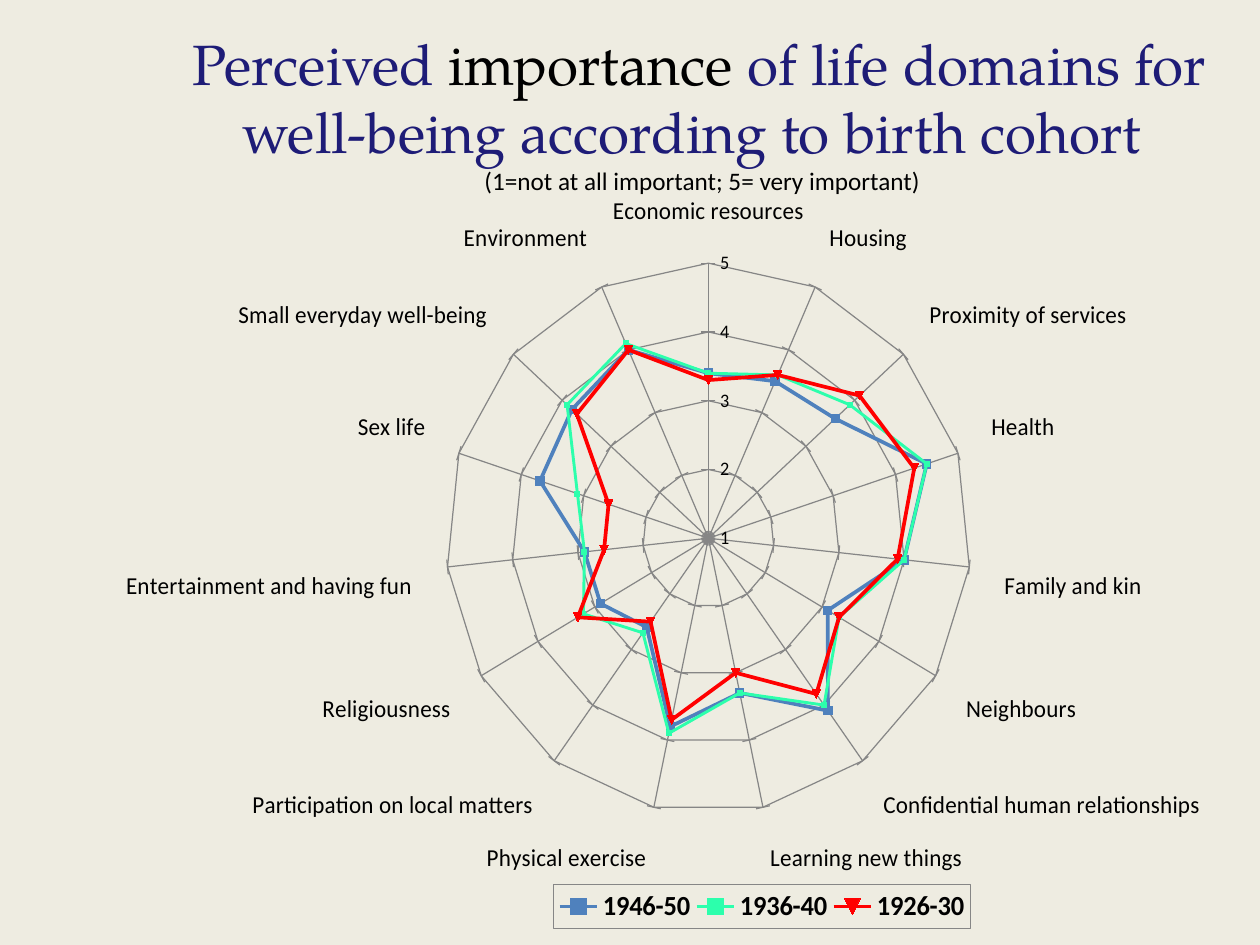
from lxml import etree
from pptx import Presentation
from pptx.chart.data import CategoryChartData
from pptx.dml.color import RGBColor
from pptx.enum.chart import XL_CHART_TYPE as ChartType, XL_LEGEND_POSITION as LegendPosition
from pptx.enum.chart import XL_MARKER_STYLE as Marker, XL_TICK_MARK as Tick
from pptx.enum.text import MSO_ANCHOR as Anchor, MSO_AUTO_SIZE as AutoSize, PP_ALIGN as Align
from pptx.oxml import parse_xml
from pptx.oxml.ns import nsdecls, qn
from pptx.util import Cm, Pt

# Content
SERIF, SANS = "TeX Gyre Pagella", "Calibri"
NAVY, BLACK, GRAY, CREAM = "1E1C77", "000000", "868686", "EEECE1"
TITLE_LINES = [
    [("Perceived ", 32.4, SERIF, NAVY),
     ("importance ", 32.4, SERIF, BLACK),
     ("of life domains for well-being according to birth cohort ", 32.4, SERIF, NAVY)],
    [(" (1=not at all important; 5= very important)", 14.4, SANS, BLACK)],
]
DOMAINS = [
    "Economic resources", "Housing", "Proximity of services", "Health", "Family and kin",
    "Neighbours", "Confidential human relationships", "Learning new things",
    "Physical exercise", "Participation on local matters", "Religiousness",
    "Entertainment and having fun", "Sex life", "Small everyday well-being", "Environment",
]
# name, values, colour, line width, marker style, marker size
COHORTS = [
    ("1946-50", [3.4, 3.5, 3.6, 4.5, 4, 3.1, 4.1, 3.3, 3.8, 2.6, 2.9, 2.9, 3.7, 3.8, 4],
     "4F81BD", 2.25, Marker.AUTOMATIC, 5),
    ("1936-40", [3.4, 3.6, 3.9, 4.5, 4, 3.3, 4, 3.3, 3.9, 2.7, 3.2, 2.9, 3.1, 3.9, 4.1],
     "2CFFAC", 1.75, Marker.SQUARE, 3),
    ("1926-30", [3.3, 3.6, 4.1, 4.3, 3.9, 3.3, 3.8, 3, 3.7, 2.5, 3.3, 2.6, 2.6, 3.7, 4],
     "FF0000", 2.25, Marker.AUTOMATIC, 5),
]
TITLE_BOX = (3.38, 0.79, 21.44, 2.95)
CHART_BOX = (2.54, 3.96, 22.86, 14.81)
PLOT_AREA = (0.24, 0.08, 0.49, 0.76)
LEGEND_AREA = (0.34, 0.94, 0.39, 0.06)


def set_all(target, **values):
    for name, value in values.items():
        setattr(target, name, value)


def paint(fill, color):
    fill.solid()
    fill.fore_color.rgb = RGBColor.from_string(color)


def style_line(line, color, width):
    paint(line.fill, color)
    line.width = Pt(width)


def style_font(font, size, name=SANS, color=BLACK, bold=False):
    set_all(font, size=Pt(size), name=name, bold=bold)
    font.color.rgb = RGBColor.from_string(color)


def make_layout(area, inner=False):
    layout = etree.Element(qn("c:layout"))
    manual = etree.SubElement(layout, qn("c:manualLayout"))
    settings = [("layoutTarget", "inner")] if inner else []
    settings += [("xMode", "edge"), ("yMode", "edge"), *zip("xywh", area)]
    for tag, value in settings:
        etree.SubElement(manual, qn("c:" + tag)).set("val", str(value))
    return layout


# Slide and background
presentation = Presentation()
set_all(presentation, slide_width=Cm(25.4), slide_height=Cm(19.05))
slide = presentation.slides.add_slide(presentation.slide_layouts[5])
paint(slide.background.fill, CREAM)

# Title
title = slide.shapes.title
set_all(title, **dict(zip(("left", "top", "width", "height"), map(Cm, TITLE_BOX))))
set_all(title.text_frame, word_wrap=True, auto_size=AutoSize.NONE, vertical_anchor=Anchor.MIDDLE)
paragraph = title.text_frame.paragraphs[0]
paragraph.alignment = Align.CENTER
for index, line in enumerate(TITLE_LINES):
    if index:
        paragraph.add_line_break()
    for text, size, name, color in line:
        run = paragraph.add_run()
        run.text = text
        style_font(run.font, size, name, color)

# Radar chart
data = CategoryChartData(number_format="0.0")
data.categories = DOMAINS
for name, values, *_ in COHORTS:
    data.add_series(name, values)
chart = slide.shapes.add_chart(ChartType.RADAR_MARKERS, *map(Cm, CHART_BOX), data).chart
set_all(chart, has_title=False, has_legend=True)
style_font(chart.font, 10)
plot = chart.plots[0]
plot.vary_by_categories = False
for series, (_, _, color, width, style, size) in zip(plot.series, COHORTS):
    series.smooth = False
    style_line(series.format.line, color, width)
    set_all(series.marker, style=style, size=size)
    paint(series.marker.format.fill, color)
    style_line(series.marker.format.line, color, 0.75)

# Axes
set_all(chart.value_axis, minimum_scale=1, maximum_scale=5, major_unit=1)
set_all(chart.value_axis.tick_labels, number_format="0", number_format_is_linked=False)
for axis, size in ((chart.category_axis, 14), (chart.value_axis, 11)):
    set_all(axis, has_major_gridlines=True, major_tick_mark=Tick.OUTSIDE, minor_tick_mark=Tick.NONE)
    style_font(axis.tick_labels.font, size)
    style_line(axis.format.line, GRAY, 0.75)
    style_line(axis.major_gridlines.format.line, GRAY, 0.75)

# Legend
legend = chart.legend
set_all(legend, position=LegendPosition.BOTTOM, include_in_layout=False)
style_font(legend.font, 16, bold=True)
legend_xml = chart._chartSpace.find(".//" + qn("c:legend"))
legend_xml.find(qn("c:legendPos")).addnext(make_layout(LEGEND_AREA))
legend_xml.find(qn("c:txPr")).addprevious(parse_xml(
    f'<c:spPr {nsdecls("c", "a")}><a:noFill/><a:ln w="9525"><a:solidFill>'
    f'<a:srgbClr val="{GRAY}"/></a:solidFill></a:ln></c:spPr>'))

# Plot area position
plot_area = chart._chartSpace.find(".//" + qn("c:plotArea"))
for old_layout in plot_area.findall(qn("c:layout")):
    plot_area.remove(old_layout)
plot_area.insert(0, make_layout(PLOT_AREA, inner=True))

presentation.save("out.pptx")
